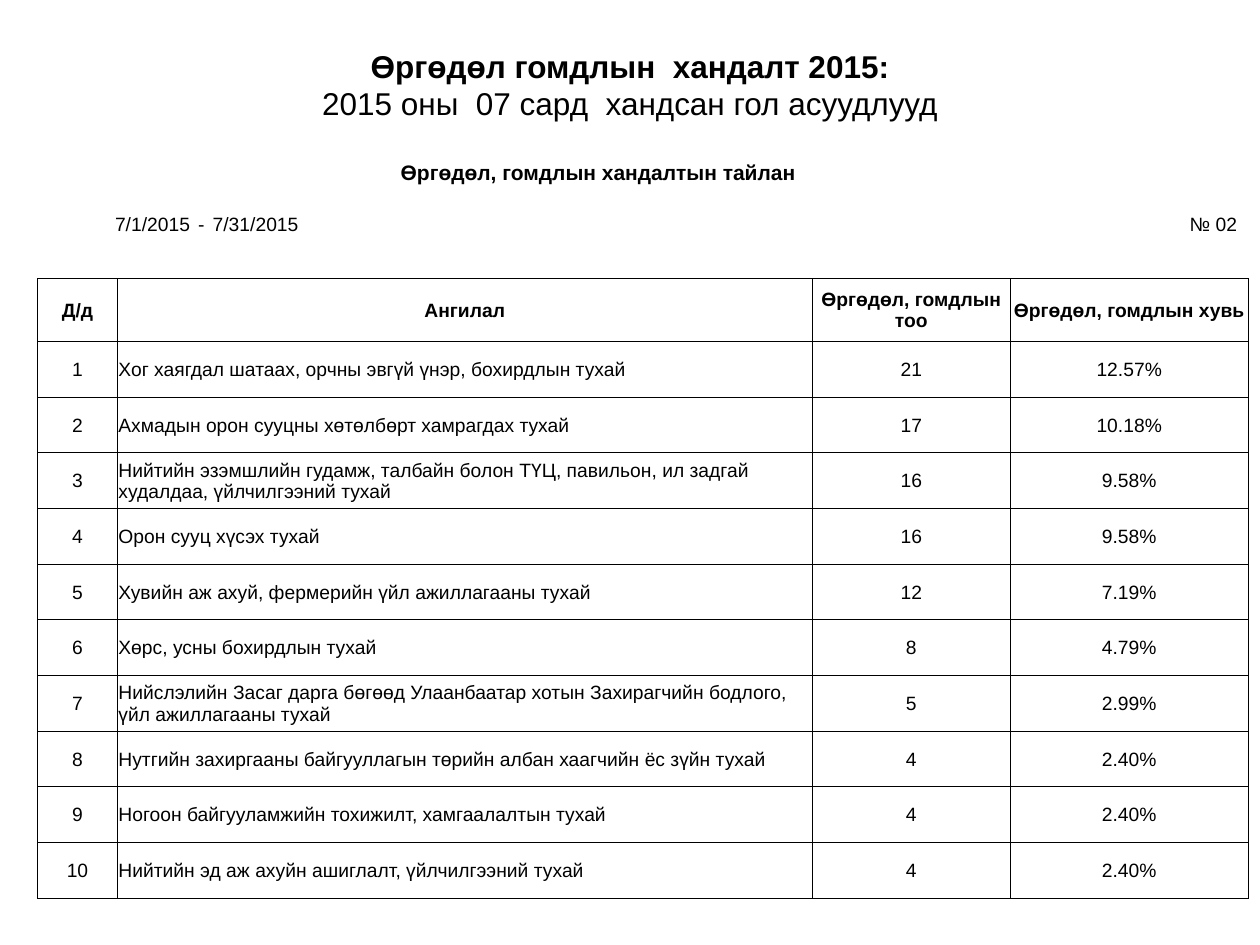
from dataclasses import dataclass

from lxml.etree import SubElement
from pptx import Presentation
from pptx.dml.color import RGBColor
from pptx.enum.text import MSO_ANCHOR, PP_ALIGN
from pptx.oxml.ns import qn
from pptx.util import Inches, Pt


@dataclass(frozen=True)
class Theme:
    font: str = "Arial"
    ink: str = "000000"
    paper: str = "FFFFFF"
    title: float = 18
    caption: float = 12
    body: float = 11
    blank: float = 6
    border: float = 0.5


THEME = Theme()
PLAIN_TABLE = "{2D5ABB26-0587-4C30-8999-92F81FD0307C}"
COLUMNS = [0.63, 0.22, 0.37, 0.05, 0.1, 1.1, 0.22, 3.45, 1.57, 0.25, 0.08, 1.48, 0.08]
TOP_ROWS = [0.28, 0.2, 0.26, 0.2]
HEADER_ROW, DATA_ROW = 0.5, 0.442
GRID_COLUMNS = [(0, 1), (1, 7), (8, 1), (9, 4)]
LEFT, CENTER, RIGHT = PP_ALIGN.LEFT, PP_ALIGN.CENTER, PP_ALIGN.RIGHT

CAPTION = "Өргөдөл, гомдлын хандалтын тайлан"
REPORT_LINE = [
    (0, 2, 3, "7/1/2015", RIGHT),
    (3, 2, 2, "-", CENTER),
    (5, 2, 1, "7/31/2015", LEFT),
    (7, 1, 3, "", LEFT),
    (11, 2, 1, "№ 02", RIGHT),
]
HEADERS = ["Д/д", "Ангилал", "Өргөдөл, гомдлын тоо", "Өргөдөл, гомдлын хувь"]
COMPLAINTS = [
    ("Хог хаягдал шатаах, орчны эвгүй үнэр, бохирдлын тухай", "21", "12.57%"),
    ("Ахмадын орон сууцны хөтөлбөрт хамрагдах тухай", "17", "10.18%"),
    ("Нийтийн эзэмшлийн гудамж, талбайн болон ТҮЦ, павильон, ил задгай худалдаа, үйлчилгээний тухай",
     "16", "9.58%"),
    ("Орон сууц хүсэх тухай", "16", "9.58%"),
    ("Хувийн аж ахуй, фермерийн үйл ажиллагааны тухай", "12", "7.19%"),
    ("Хөрс, усны бохирдлын тухай", "8", "4.79%"),
    ("Нийслэлийн Засаг дарга бөгөөд Улаанбаатар хотын Захирагчийн бодлого, үйл ажиллагааны тухай",
     "5", "2.99%"),
    ("Нутгийн захиргааны байгууллагын төрийн албан хаагчийн ёс зүйн тухай", "4", "2.40%"),
    ("Ногоон байгууламжийн тохижилт, хамгаалалтын тухай", "4", "2.40%"),
    ("Нийтийн эд аж ахуйн ашиглалт, үйлчилгээний тухай", "4", "2.40%"),
]


def apply(target, values):
    for name, value in values.items():
        setattr(target, name, value)


def style_font(font, size, bold=False):
    apply(font, {"name": THEME.font, "size": Pt(size), "bold": bold})
    font.color.rgb = RGBColor.from_string(THEME.ink)


def add_title(page, box):
    frame = page.shapes.add_textbox(*box).text_frame
    apply(frame, {"word_wrap": True, "vertical_anchor": MSO_ANCHOR.MIDDLE})
    para = frame.paragraphs[0]
    para.alignment = CENTER
    heading = para.add_run()
    heading.text = "Өргөдөл гомдлын  хандалт 2015:"
    style_font(heading.font, THEME.title, True)
    para.add_line_break()
    subject = para.add_run()
    subject.text = "2015 оны  07 сард  хандсан гол асуудлууд"
    style_font(subject.font, THEME.title)


def draw_borders(cell):
    properties = cell._tc.get_or_add_tcPr()
    for side in ("a:lnL", "a:lnR", "a:lnT", "a:lnB"):
        line = SubElement(properties, qn(side), w=str(Pt(THEME.border)))
        fill = SubElement(line, qn("a:solidFill"))
        SubElement(fill, qn("a:srgbClr"), val=THEME.ink)


def prepare_cell(cell, bordered):
    apply(cell, {
        "margin_left": Inches(0.01), "margin_right": Inches(0.01),
        "margin_top": Inches(0.01), "margin_bottom": 0,
        "vertical_anchor": MSO_ANCHOR.MIDDLE,
    })
    if bordered:
        draw_borders(cell)
    cell.fill.solid()
    cell.fill.fore_color.rgb = RGBColor.from_string(THEME.paper)
    style_font(cell.text_frame.paragraphs[0].font, THEME.blank)


def fill_cell(table, row, column, height, width, text, align, size=THEME.body, bold=False):
    cell = table.cell(row, column)
    if height * width > 1:
        cell.merge(table.cell(row + height - 1, column + width - 1))
    if text:
        para = cell.text_frame.paragraphs[0]
        para.alignment = align
        span = para.add_run()
        span.text = text
        style_font(span.font, size, bold)


def fill_report_heading(table):
    fill_cell(table, 0, 2, 1, 9, CAPTION, CENTER, THEME.caption, True)
    table.cell(0, 2).vertical_anchor = MSO_ANCHOR.TOP
    for column, height, width, text, align in REPORT_LINE:
        fill_cell(table, 1, column, height, width, text, align)


def fill_complaints(table, first_row):
    records = [HEADERS] + [(str(number), *entry) for number, entry in enumerate(COMPLAINTS, 1)]
    for index, record in enumerate(records):
        is_header = index == 0
        for (column, width), text in zip(GRID_COLUMNS, record):
            align = LEFT if column == 1 and not is_header else CENTER
            fill_cell(table, first_row + index, column, 1, width, text, align, bold=is_header)


def add_report(page, box):
    heights = TOP_ROWS + [HEADER_ROW] + [DATA_ROW] * len(COMPLAINTS)
    table = page.shapes.add_table(len(heights), len(COLUMNS), *box).table
    apply(table, {"first_row": False, "horz_banding": False})
    table._tbl.tblPr.find(qn("a:tableStyleId")).text = PLAIN_TABLE
    for column, width in zip(table.columns, COLUMNS):
        column.width = Inches(width)
    for index, height in enumerate(heights):
        row = table.rows[index]
        row.height = Inches(height)
        for cell in row.cells:
            prepare_cell(cell, index >= len(TOP_ROWS))
    fill_report_heading(table)
    fill_complaints(table, len(TOP_ROWS))


def main():
    deck = Presentation()
    apply(deck, {"slide_width": Inches(10), "slide_height": Inches(7.5)})
    page = deck.slides.add_slide(deck.slide_layouts[6])
    add_title(page, (Inches(0.69), Inches(0.17), Inches(8.62), Inches(1)))
    add_report(page, (Inches(0.3), Inches(1.27), Inches(9.6), Inches(5.86)))
    deck.save("out.pptx")


if __name__ == "__main__":
    main()
